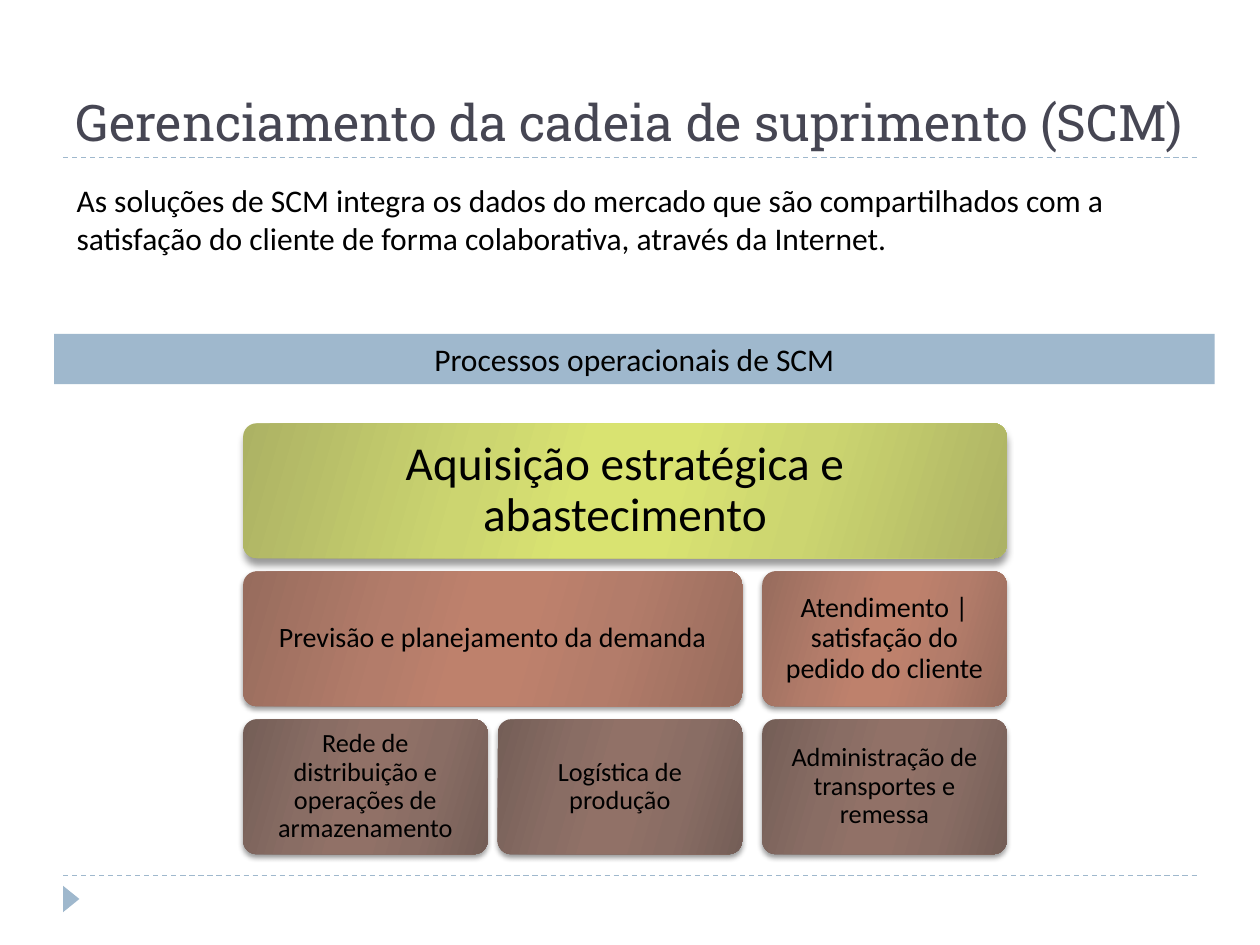
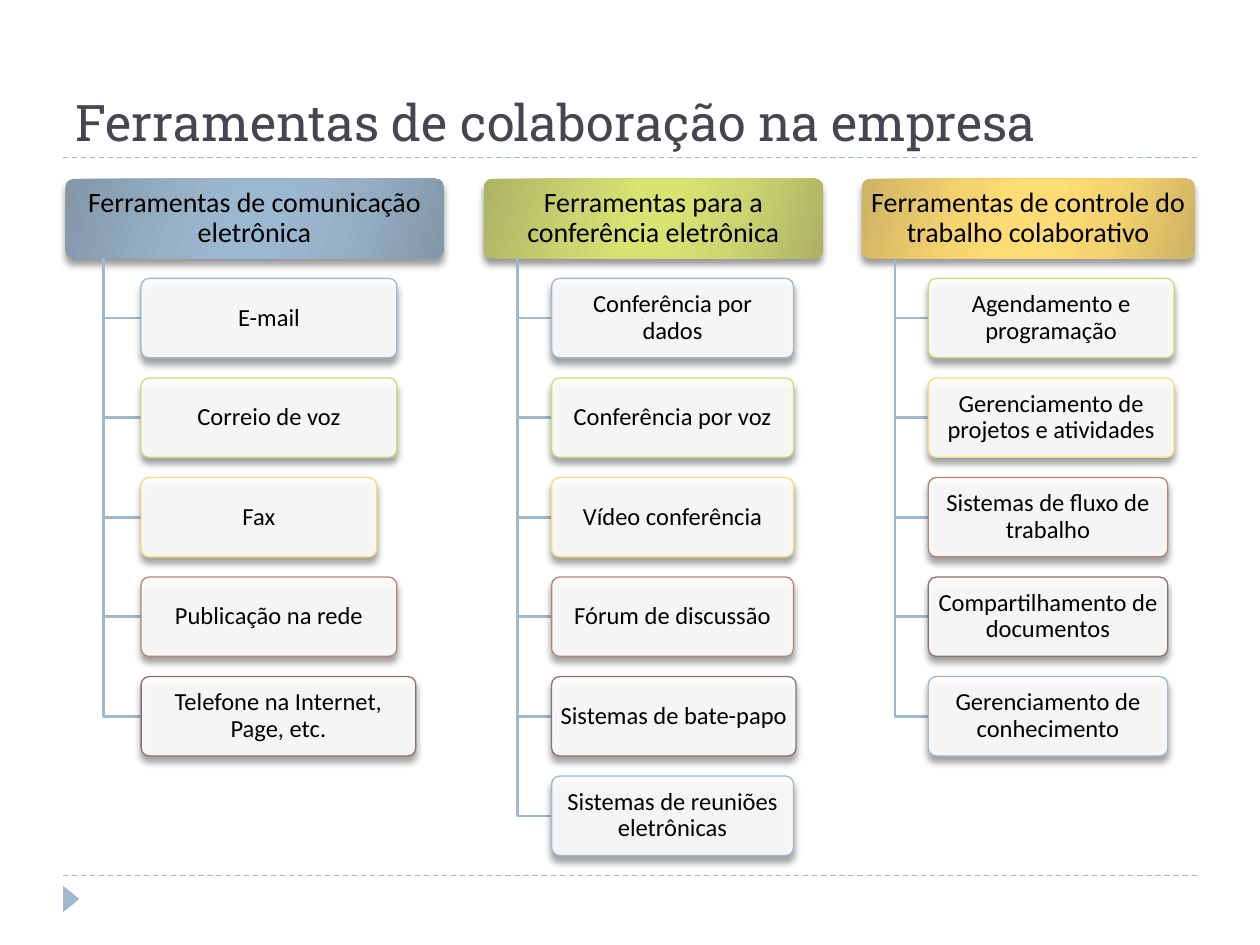
"""Builds two slides on supply chain management and collaboration tools."""
from dataclasses import dataclass

from lxml import etree
from pptx import Presentation
from pptx.dml.color import RGBColor
from pptx.enum.dml import MSO_LINE
from pptx.enum.shapes import MSO_CONNECTOR, MSO_SHAPE
from pptx.enum.text import MSO_ANCHOR, MSO_AUTO_SIZE, PP_ALIGN
from pptx.oxml.ns import qn
from pptx.util import Inches, Pt

STRAIGHT = MSO_CONNECTOR.STRAIGHT
DASH = MSO_LINE.DASH
RECTANGLE = MSO_SHAPE.RECTANGLE
ROUNDED = MSO_SHAPE.ROUNDED_RECTANGLE
TRIANGLE = MSO_SHAPE.ISOSCELES_TRIANGLE
LEFT, CENTER = PP_ALIGN.LEFT, PP_ALIGN.CENTER
TOP, MIDDLE, BOTTOM = MSO_ANCHOR.TOP, MSO_ANCHOR.MIDDLE, MSO_ANCHOR.BOTTOM
NO_AUTOFIT = MSO_AUTO_SIZE.NONE
TITLE_ONLY = 5


@dataclass(frozen=True)
class Theme:
    """Colours, fonts and type sizes shared by the slides."""
    ink: str = "000000"
    heading: str = "464653"
    paper: str = "FFFFFF"
    accent: str = "9FB8CD"
    outlines: tuple = ("9FB8CD", "D2DA7A", "FADA7A", "B88472", "8E736A")
    blue: tuple = ("8297A8", "96B0C6", "9BB8D1")
    green: tuple = ("ACB264", "CCD570", "D9E371")
    yellow: tuple = ("CDB264", "F5D36E", "FFDC75")
    rust: tuple = ("976C5D", "B37C6A", "BE816C")
    brown: tuple = ("745E57", "896D64", "917167")
    heading_font: str = "Roboto Slab"
    body_font: str = "Calibri"
    title_size: float = 28.8
    lead_size: float = 27
    text_size: float = 18
    group_size: float = 16
    process_size: float = 15
    tool_size: float = 14
    deep_shadow: tuple = (4, 3.4)
    soft_shadow: tuple = (3, 2)


THEME = Theme()
GRADIENT_STOPS = ((0, 0), (30, 1), (45, 2), (55, 2), (73, 1), (100, 0))

PROCESS_LEFTS = (1.93, 3.95, 6.05)
PROCESS_WIDTH, PROCESS_HEIGHT = 1.94, 1.07
PROCESS_TOP, PROCESS_STEP = 3.36, 1.175
PROCESS_ROWS = (
    (THEME.green, THEME.lead_size, 0.14, THEME.deep_shadow,
     (("Aquisição estratégica e abastecimento", 0, 2),)),
    (THEME.rust, THEME.group_size, 0.1, THEME.soft_shadow,
     (("Previsão e planejamento da demanda", 0, 1),
      ("Atendimento | satisfação do pedido do cliente", 2, 2))),
    (THEME.brown, THEME.process_size, 0.09, THEME.soft_shadow,
     (("Rede de distribuição e operações de armazenamento", 0, 0),
      ("Logística de produção", 1, 1),
      ("Administração de transportes e remessa", 2, 2))),
)

TOOL_TOP, TOOL_STEP, TOOL_HEIGHT = 1.42, 0.79, 0.63
TOOL_FAMILIES = (
    ("Ferramentas de comunicação eletrônica", 0.52, 3, THEME.blue, 0,
     (("E-mail", 2.03), ("Correio de voz", 2.03), ("Fax", 1.87),
      ("Publicação na rede", 2.03),
      ("Telefone na Internet, Page, etc.", 2.18))),
    ("Ferramentas para a conferência eletrônica", 3.84, 2.69, THEME.green, 0,
     (("Conferência por dados", 1.92), ("Conferência por voz", 1.92),
      ("Vídeo conferência", 1.92), ("Fórum de discussão", 1.92),
      ("Sistemas de bate-papo", 1.94),
      ("Sistemas de reuniões eletrônicas", 1.92))),
    ("Ferramentas de controle do trabalho colaborativo", 6.84, 2.64,
     THEME.yellow, 1,
     (("Agendamento e programação", 1.95),
      ("Gerenciamento de projetos e atividades", 1.95),
      ("Sistemas de fluxo de trabalho", 1.9),
      ("Compartilhamento de documentos", 1.9),
      ("Gerenciamento de conhecimento", 1.9))),
)


def rgb(code):
    """Turn a hex code into a colour."""
    return RGBColor.from_string(code)


def add_color(parent, code, alpha=None):
    """Append a colour element, with an optional opacity in percent."""
    color = etree.SubElement(parent, qn("a:srgbClr"), val=code)
    if alpha is not None:
        etree.SubElement(color, qn("a:alpha"), val=str(alpha * 1000))


def write(frame, text, size, align=LEFT, anchor=TOP, spacing=None,
          font=THEME.body_font, color=THEME.ink):
    """Write one formatted paragraph into a text frame."""
    frame.text = text
    frame.word_wrap = True
    frame.auto_size = NO_AUTOFIT
    frame.vertical_anchor = anchor
    paragraph = frame.paragraphs[0]
    paragraph.alignment = align
    if spacing:
        paragraph.line_spacing = spacing
    paragraph.font.name = font
    paragraph.font.size = Pt(size)
    paragraph.font.color.rgb = rgb(color)


def add_flat(slide, kind, left, top, width, height):
    """Add an accent-coloured shape without outline or shadow."""
    shape = slide.shapes.add_shape(kind, *map(Inches, (left, top, width, height)))
    shape.shadow.inherit = False
    shape.fill.solid()
    shape.fill.fore_color.rgb = rgb(THEME.accent)
    shape.line.fill.background()
    return shape


def cast_shadow(shape, blur, distance):
    """Give a shape a soft shadow that falls straight down."""
    shape.shadow.inherit = False
    effects = shape.element.spPr.find(qn("a:effectLst"))
    shadow = etree.SubElement(
        effects, qn("a:outerShdw"), blurRad=str(Pt(blur)),
        dist=str(Pt(distance)), dir="5400000", rotWithShape="0")
    add_color(shadow, THEME.ink, 40)


def add_box(slide, text, place, size, inset, shadow):
    """Add a rounded box with centred text and a shadow."""
    box = slide.shapes.add_shape(ROUNDED, *map(Inches, place))
    box.adjustments[0] = 0.1
    cast_shadow(box, *shadow)
    frame = box.text_frame
    frame.margin_left = frame.margin_right = Inches(inset)
    frame.margin_top = frame.margin_bottom = Inches(inset)
    write(frame, text, size, CENTER, MIDDLE, 0.9)
    return box


def fill_glossy(box, shades):
    """Fill a box with a slanted gradient, dark at both ends."""
    box.line.fill.background()
    box.fill.gradient()
    box.fill.gradient_angle = 344
    stops = box.element.spPr.find(".//" + qn("a:gsLst"))
    for stop in list(stops):
        stops.remove(stop)
    for position, shade in GRADIENT_STOPS:
        stop = etree.SubElement(stops, qn("a:gs"), pos=str(position * 1000))
        add_color(stop, shades[shade])


def fill_pale(box, outline):
    """Fill a box with translucent white and a thin coloured outline."""
    box.fill.solid()
    box.fill.fore_color.rgb = rgb(THEME.paper)
    color = box.element.spPr.find(qn("a:solidFill") + "/" + qn("a:srgbClr"))
    etree.SubElement(color, qn("a:alpha"), val="90000")
    box.line.color.rgb = rgb(outline)
    box.line.width = Pt(0.75)


def add_branch(slide, spine, start, end, middle):
    """Draw the elbow from a family heading to one of its tools."""
    points = [(Inches(x), Inches(y))
              for x, y in ((spine, start), (spine, middle), (end, middle))]
    builder = slide.shapes.build_freeform(*points[0])
    builder.add_line_segments(points[1:], close=False)
    branch = builder.convert_to_shape()
    branch.shadow.inherit = False
    branch.fill.background()
    branch.line.color.rgb = rgb(THEME.accent)
    branch.line.width = Pt(1.5)


def add_rule(slide, height):
    """Draw a dashed rule between the slide margins."""
    rule = slide.shapes.add_connector(
        STRAIGHT, *map(Inches, (0.5, height, 9.5, height)))
    rule.line.color.rgb = rgb(THEME.accent)
    rule.line.width = Pt(0.75)
    rule.line.dash_style = DASH
    etree.SubElement(rule.element.spPr, qn("a:effectLst"))


def add_page(deck, heading):
    """Add a slide with its title, rules and corner marker."""
    slide = deck.slides.add_slide(deck.slide_layouts[TITLE_ONLY])
    title = slide.shapes.title
    title.left, title.top, title.width, title.height = map(
        Inches, (0.5, 0.25, 9, 1))
    write(title.text_frame, heading, THEME.title_size, anchor=BOTTOM,
          font=THEME.heading_font, color=THEME.heading)
    add_rule(slide, 6.95)
    add_rule(slide, 1.25)
    add_flat(slide, TRIANGLE, 0.46, 7.07, 0.21, 0.13).rotation = 90
    return slide


def add_processes(slide):
    """Stack the process boxes on a grid of three columns."""
    for row, (shades, size, inset, shadow, processes) in enumerate(PROCESS_ROWS):
        top = PROCESS_TOP + row * PROCESS_STEP
        for text, first, last in processes:
            left = PROCESS_LEFTS[first]
            width = PROCESS_LEFTS[last] + PROCESS_WIDTH - left
            place = (left, top, width, PROCESS_HEIGHT)
            fill_glossy(add_box(slide, text, place, size, inset, shadow), shades)


def add_family(slide, heading, left, width, shades, first_outline, tools):
    """Draw a family heading with its tools branching off below."""
    place = (left, TOOL_TOP, width, TOOL_HEIGHT)
    fill_glossy(add_box(slide, heading, place, THEME.group_size, 0.05,
                        THEME.deep_shadow), shades)
    spine, indent = left + width * 0.1, left + width * 0.2
    for row, (tool, tool_width) in enumerate(tools, 1):
        top = TOOL_TOP + row * TOOL_STEP
        add_branch(slide, spine, TOOL_TOP + TOOL_HEIGHT, indent,
                   top + TOOL_HEIGHT / 2)
        box = add_box(slide, tool, (indent, top, tool_width, TOOL_HEIGHT),
                      THEME.tool_size, 0.05, THEME.deep_shadow)
        outline = (first_outline + row - 1) % len(THEME.outlines)
        fill_pale(box, THEME.outlines[outline])


def add_supply_chain(deck):
    """Build the slide on supply chain management."""
    slide = add_page(deck, "Gerenciamento da cadeia de suprimento (SCM)")
    intro = slide.shapes.add_textbox(*map(Inches, (0.51, 1.39, 9.13, 0.71)))
    write(intro.text_frame,
          "As soluções de SCM integra os dados do mercado que são "
          "compartilhados com a satisfação do cliente de forma colaborativa, "
          "através da Internet.", THEME.text_size)
    add_processes(slide)
    band = add_flat(slide, RECTANGLE, 0.43, 2.65, 9.21, 0.4)
    write(band.text_frame, "Processos operacionais de SCM",
          THEME.text_size, CENTER)


def add_collaboration(deck):
    """Build the slide on collaboration tools."""
    slide = add_page(deck, "Ferramentas de colaboração na empresa")
    for family in TOOL_FAMILIES:
        add_family(slide, *family)


def main():
    """Build and save the presentation."""
    deck = Presentation()
    deck.slide_width, deck.slide_height = Inches(10), Inches(7.5)
    add_supply_chain(deck)
    add_collaboration(deck)
    deck.save("out.pptx")


if __name__ == "__main__":
    main()
